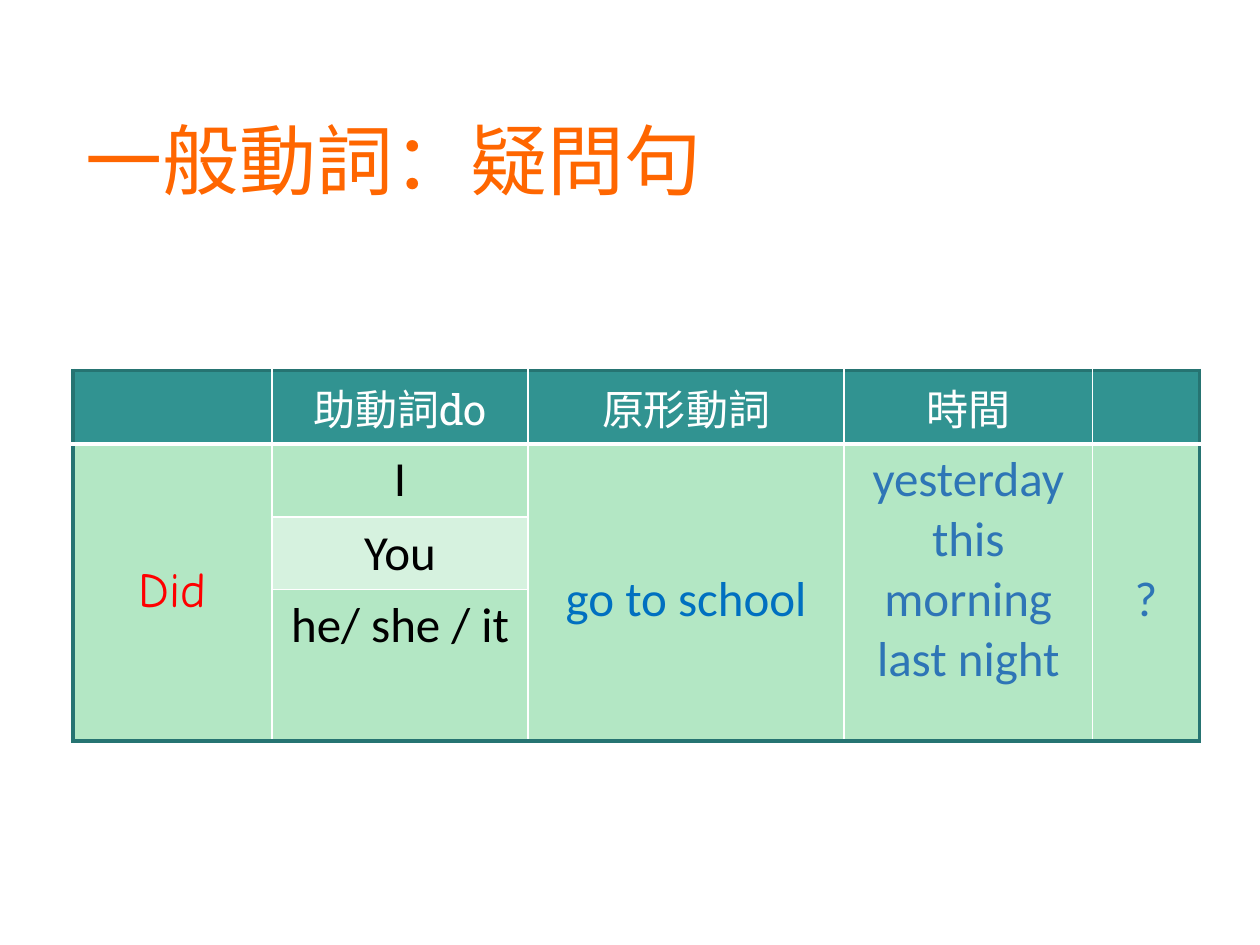
from lxml import etree
from pptx import Presentation
from pptx.dml.color import RGBColor
from pptx.enum.text import MSO_ANCHOR, PP_ALIGN
from pptx.oxml.ns import qn
from pptx.util import Inches, Pt

CENTER = PP_ALIGN.CENTER
MIDDLE = MSO_ANCHOR.MIDDLE

CJK, SLAB, COMIC, SANS = "Noto Sans CJK JP", "Roboto Slab", "Comic Neue", "Calibri"
WHITE, BLACK, EDGE = "FFFFFF", "000000", "267472"
TEAL, GREEN, PALE = "319391", "B3E7C4", "D6F2DF"
RED, BLUE, STEEL, ORANGE = "FF0000", "0070C0", "2E75B6", "FF6600"

TITLE = "一般動詞：疑問句"
WIDTHS = [1.58, 2.03, 2.51, 1.97, 0.85]
HEIGHTS = [0.58, 0.58, 0.57, 1.2]
FILLS = [TEAL, GREEN, PALE, GREEN]
TALL = [0, 2, 3, 4]  # columns whose body cells are merged

# (row, column): paragraphs, each a list of (text, font), then size, colour, top margin
TEXTS = {
    (0, 1): ([[("助動詞", CJK), ("do", SLAB)]], 24, WHITE, 0.05),
    (0, 2): ([[("原形動詞", CJK)]], 24, WHITE, 0.05),
    (0, 3): ([[("時間", CJK)]], 24, WHITE, 0.05),
    (1, 0): ([[("Did", COMIC)]], 28, RED, 0.95),
    (1, 1): ([[("I", SANS)]], 28, BLACK, 0.05),
    (1, 2): ([[("go to school", SANS)]], 28, BLUE, 1),
    (1, 3): ([[("yesterday", SANS)], [("this morning", SANS)],
              [("last night", SANS)]], 28, STEEL, 0.05),
    (1, 4): ([[("?", SANS)]], 28, STEEL, 1),
    (2, 1): ([[("You", SANS)]], 28, BLACK, 0.05),
    (3, 1): ([[("he/ she / it", SANS)]], 28, BLACK, 0.05),
}


def rgb(code):
    return RGBColor.from_string(code)


def add_run(para, text, face, size, color):
    run = para.add_run()
    run.text = text
    font = run.font
    font.name, font.size, font.color.rgb = face, Pt(size), rgb(color)
    if face == CJK:
        east = etree.SubElement(run._r.get_or_add_rPr(), qn("a:ea"))
        east.set("typeface", face)


def add_edge(cell, side, color, width):
    line = etree.SubElement(cell._tc.get_or_add_tcPr(), qn("a:ln" + side))
    line.set("w", str(Pt(width)))
    fill = etree.SubElement(line, qn("a:solidFill"))
    etree.SubElement(fill, qn("a:srgbClr")).set("val", color)


def style(cell, row, col):
    """Dark outer frame, thin white grid, thick rule under the header."""
    outer, thin, rule = (EDGE, 2.25), (WHITE, 1), (WHITE, 3)
    last = len(HEIGHTS) - 1
    add_edge(cell, "L", *(outer if col == 0 else thin))
    add_edge(cell, "R", *(outer if col == len(WIDTHS) - 1 else thin))
    add_edge(cell, "T", *(outer if row == 0 else rule if row == 1 else thin))
    add_edge(cell, "B", *(outer if row == last else rule if row == 0 else thin))
    cell.fill.solid()
    shade = GREEN if row and col in TALL else FILLS[row]
    cell.fill.fore_color.rgb = rgb(shade)


def write(cell, paras, size, color, top):
    cell.margin_top = Inches(top)
    frame = cell.text_frame
    for i, runs in enumerate(paras):
        para = frame.add_paragraph() if i else frame.paragraphs[0]
        para.alignment = CENTER
        for text, face in runs:
            add_run(para, text, face, size, color)


def add_grid(slide):
    grid = slide.shapes.add_table(
        len(HEIGHTS), len(WIDTHS), Inches(0.58), Inches(2.94),
        Inches(sum(WIDTHS)), Inches(sum(HEIGHTS))).table
    for column, width in zip(grid.columns, WIDTHS):
        column.width = Inches(width)
    for row, height in zip(grid.rows, HEIGHTS):
        row.height = Inches(height)
    for r in range(len(HEIGHTS)):
        for c in range(len(WIDTHS)):
            style(grid.cell(r, c), r, c)
    for c in TALL:
        first = grid.cell(1, c)
        first.merge(grid.cell(len(HEIGHTS) - 1, c))
        base = first._tc.tcPr.find(qn("a:lnB"))
        base.set("w", str(Pt(2.25)))
        base.find(".//" + qn("a:srgbClr")).set("val", EDGE)
    for (r, c), content in TEXTS.items():
        write(grid.cell(r, c), *content)


def add_title(slide):
    title = slide.shapes.title
    title.left, title.top = Inches(0.58), Inches(0.58)
    title.width, title.height = Inches(8.62), Inches(1.45)
    title.text_frame.vertical_anchor = MIDDLE
    para = title.text_frame.paragraphs[0]
    para.alignment = PP_ALIGN.LEFT
    para.line_spacing = 0.9
    add_run(para, TITLE, CJK, 44, ORANGE)


def main():
    deck = Presentation()
    deck.slide_width, deck.slide_height = Inches(10), Inches(7.5)
    slide = deck.slides.add_slide(deck.slide_layouts[5])
    add_title(slide)
    add_grid(slide)
    deck.save("out.pptx")


if __name__ == "__main__":
    main()
